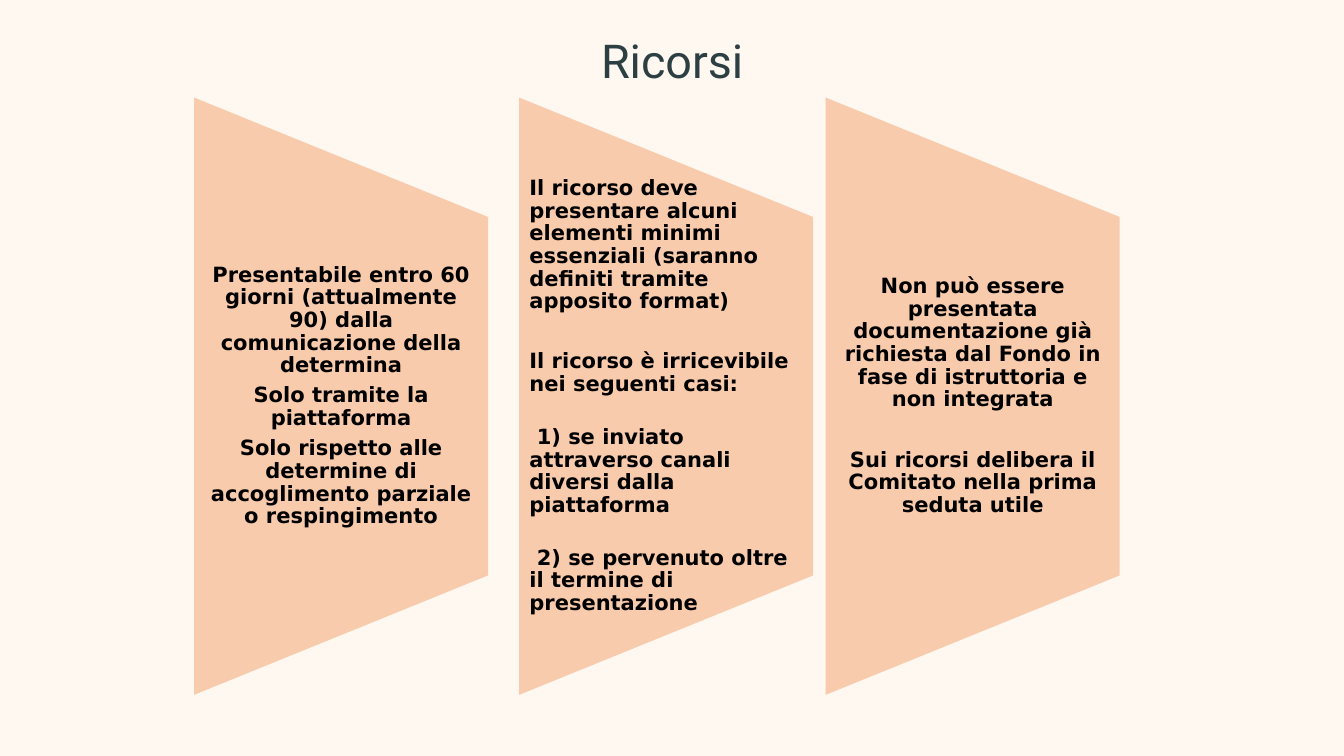
from pptx import Presentation
from pptx.dml.color import RGBColor
from pptx.enum.shapes import MSO_SHAPE as Preset
from pptx.enum.text import MSO_ANCHOR as Anchor, MSO_AUTO_SIZE as AutoSize, PP_ALIGN as Align
from pptx.util import Cm, Pt

COLORS = {"background": "FFF8F0", "panel": "F8CBAD", "title": "2C3F42", "text": "000000"}
PANEL_WIDTH, PANEL_HEIGHT = Cm(8.89), Cm(18.06)
TEXT_HEIGHT = Cm(10.85)
MIDDLE = Cm(11.98)
GAP, BREAK_GAP, WIDE_GAP = Pt(6.3), Pt(25.8), Pt(32.1)
ITEM_INDENT = Pt(6.3)

# Each panel: left edge, alignment, paragraphs as (text, space after, first-line indent)
PANELS = [
    (Cm(5.87), Align.CENTER, [
        ("Presentabile entro 60 giorni (attualmente 90) dalla comunicazione della determina", GAP, 0),
        ("Solo tramite la piattaforma", GAP, 0),
        ("Solo rispetto alle determine di accoglimento parziale o respingimento", GAP, 0),
    ]),
    (Cm(15.7), Align.LEFT, [
        ("Il ricorso deve presentare alcuni elementi minimi essenziali "
         "(saranno definiti tramite apposito format)", WIDE_GAP, 0),
        ("Il ricorso è irricevibile nei seguenti casi:", BREAK_GAP, 0),
        ("1) se inviato attraverso canali diversi dalla piattaforma", BREAK_GAP, ITEM_INDENT),
        ("2) se pervenuto oltre il termine di presentazione", GAP, ITEM_INDENT),
    ]),
    (Cm(24.97), Align.CENTER, [
        ("Non può essere presentata documentazione già richiesta dal Fondo "
         "in fase di istruttoria e non integrata", WIDE_GAP, 0),
        ("Sui ricorsi delibera il Comitato nella prima seduta utile", GAP, 0),
    ]),
]


def color(name):
    return RGBColor.from_string(COLORS[name])


def set_font(para, name, size, color_name, bold=False):
    font = para.font
    font.name, font.size, font.bold = name, Pt(size), bold
    font.color.rgb = color(color_name)


def set_frame(frame, anchor, side_margin):
    frame.word_wrap = True
    frame.auto_size = AutoSize.NONE
    frame.vertical_anchor = anchor
    frame.margin_left = frame.margin_right = side_margin
    frame.margin_top = frame.margin_bottom = 0


def add_title(page, text):
    title = page.shapes.title
    title.left, title.top, title.width, title.height = Cm(5.77), Cm(0.89), Cm(29.11), Cm(2.03)
    set_frame(title.text_frame, Anchor.TOP, 0)
    para = title.text_frame.paragraphs[0]
    para.text = text
    para.alignment = Align.CENTER
    para.line_spacing = Pt(50)
    set_font(para, "Roboto", 40, "title")


def add_panel(page, left):
    """Add a trapezoid turned so that its long side is on the left."""
    center = left + PANEL_WIDTH // 2
    panel = page.shapes.add_shape(
        Preset.FLOWCHART_MANUAL_OPERATION, center - PANEL_HEIGHT // 2,
        MIDDLE - PANEL_WIDTH // 2, PANEL_HEIGHT, PANEL_WIDTH)
    panel.rotation = 270
    panel.shadow.inherit = False
    panel.fill.solid()
    panel.fill.fore_color.rgb = color("panel")
    panel.line.fill.background()


def add_panel_text(page, left, alignment, paragraphs):
    box = page.shapes.add_textbox(left, MIDDLE - TEXT_HEIGHT // 2, PANEL_WIDTH, TEXT_HEIGHT)
    frame = box.text_frame
    set_frame(frame, Anchor.MIDDLE, Cm(0.31))
    for index, (text, space_after, indent) in enumerate(paragraphs):
        para = frame.add_paragraph() if index else frame.paragraphs[0]
        para.text = text
        para.alignment = alignment
        para.line_spacing = 0.9
        para.space_after = space_after
        if indent:
            para._p.get_or_add_pPr().set("indent", str(int(indent)))
        set_font(para, "DejaVu Sans", 18, "text", bold=True)


def main():
    deck = Presentation()
    deck.slide_width, deck.slide_height = Cm(40.64), Cm(22.86)
    page = deck.slides.add_slide(deck.slide_layouts[5])
    page.background.fill.solid()
    page.background.fill.fore_color.rgb = color("background")
    add_title(page, "Ricorsi")
    for left, alignment, paragraphs in PANELS:
        add_panel(page, left)
        add_panel_text(page, left, alignment, paragraphs)
    deck.save("out.pptx")


if __name__ == "__main__":
    main()
